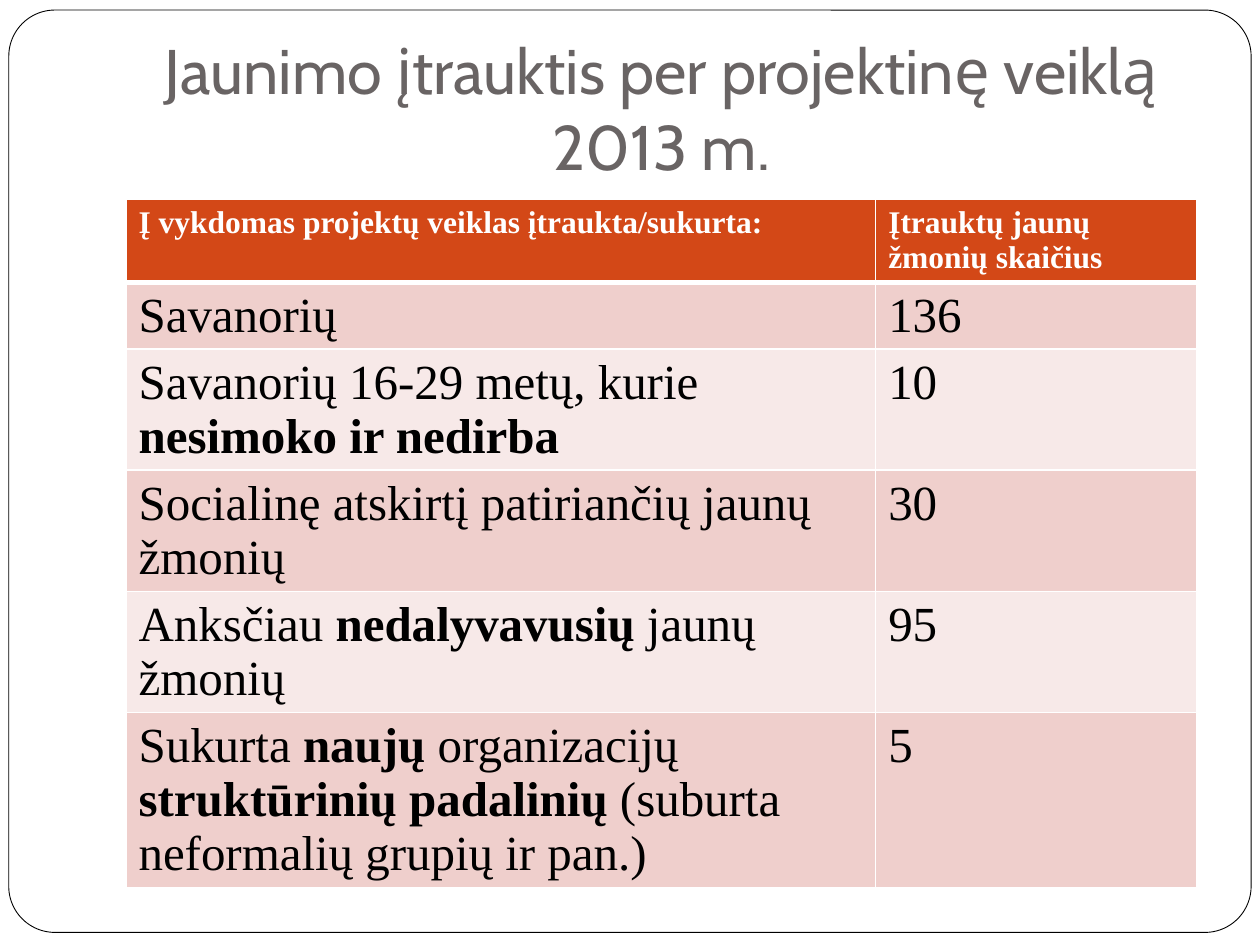
from lxml import etree
from pptx import Presentation
from pptx.dml.color import RGBColor
from pptx.enum.shapes import MSO_SHAPE
from pptx.enum.text import MSO_ANCHOR, MSO_AUTO_SIZE, PP_ALIGN
from pptx.oxml.ns import qn
from pptx.util import Inches, Pt

ROUNDED = MSO_SHAPE.ROUNDED_RECTANGLE
BOTTOM, CENTER, NO_FIT = MSO_ANCHOR.BOTTOM, PP_ALIGN.CENTER, MSO_AUTO_SIZE.NONE

THEME = {
    "white": "FFFFFF", "frame": "000000", "header": "D34817",
    "bands": ["EFCFCC", "F7E9E8"],
    "title": {"name": "Cabin", "size": Pt(36), "color": "696464"},
    "heading": {"name": "Times New Roman", "size": Pt(18), "color": "FFFFFF"},
    "body": {"name": "Times New Roman", "size": Pt(28), "color": "000000"},
}
LEFT, CONTENT_WIDTH = 1, 8.5
COLUMN_WIDTHS = [0.7 * CONTENT_WIDTH, 0.3 * CONTENT_WIDTH]
ONE_LINE, LINE_STEP = 0.53, 0.43

# Asterisks enclose bold words; the number is the count of text lines.
HEADINGS = ["*Į vykdomas projektų veiklas įtraukta/sukurta:*",
            "*Įtrauktų jaunų žmonių skaičius*"]
ROWS = [
    ("Savanorių", "136", 1),
    ("Savanorių 16-29 metų, kurie *nesimoko ir nedirba*", "10", 2),
    ("Socialinę atskirtį patiriančių jaunų žmonių", "30", 2),
    ("Anksčiau *nedalyvavusių* jaunų žmonių", "95", 2),
    ("Sukurta *naujų *organizacijų *struktūrinių padalinių*"
     " (suburta neformalių grupių ir pan.)", "5", 3),
]


def write_marked(paragraph, text, style):
    """Add runs in the given style, with text between asterisks in bold."""
    for index, part in enumerate(text.split("*")):
        if part:
            run = paragraph.add_run()
            run.text = part
            run.font.bold = index % 2 == 1
            run.font.color.rgb = RGBColor.from_string(style["color"])
            for name in ("name", "size"):
                setattr(run.font, name, style[name])


def set_borders(cell, widths):
    """Draw white cell borders; widths maps side letters to points."""
    properties = cell._tc.get_or_add_tcPr()
    for index, (side, width) in enumerate(widths.items()):
        line = etree.Element(qn(f"a:ln{side}"), w=str(Pt(width)))
        fill = etree.SubElement(line, qn("a:solidFill"))
        etree.SubElement(fill, qn("a:srgbClr"), val=THEME["white"])
        properties.insert(index, line)


presentation = Presentation()
presentation.slide_width, presentation.slide_height = Inches(10), Inches(7.5)
slide = presentation.slides.add_slide(presentation.slide_layouts[5])

# Rounded frame behind everything
frame = slide.shapes.add_shape(
    ROUNDED, Inches(0.07), Inches(0.08), Inches(9.86), Inches(7.32))
frame.adjustments[0] = 0.05
frame.shadow.inherit = False
frame.fill.solid()
frame.fill.fore_color.rgb = RGBColor.from_string(THEME["white"])
frame.line.color.rgb = RGBColor.from_string(THEME["frame"])
frame.line.width = Pt(0.5)
slide.shapes._spTree.insert(2, frame._element)

# Title
title = slide.shapes.title
title_box = {"left": LEFT, "top": 0.3, "width": CONTENT_WIDTH, "height": 1.25}
for name, value in title_box.items():
    setattr(title, name, Inches(value))
title_format = {
    "word_wrap": True, "auto_size": NO_FIT, "vertical_anchor": BOTTOM,
    "margin_left": Inches(0.1), "margin_right": Inches(0.1),
    "margin_top": Inches(0.05), "margin_bottom": Inches(0.1),
}
for name, value in title_format.items():
    setattr(title.text_frame, name, value)
title_paragraph = title.text_frame.paragraphs[0]
title_paragraph.alignment = CENTER
write_marked(title_paragraph, "Jaunimo įtrauktis per projektinę veiklą 2013 m.",
             THEME["title"])

# Table of involved young people
heights = [0.66] + [ONE_LINE + LINE_STEP * (lines - 1) for *_, lines in ROWS]
table = slide.shapes.add_table(
    len(heights), len(COLUMN_WIDTHS), Inches(LEFT), Inches(1.58),
    Inches(CONTENT_WIDTH), Inches(sum(heights))).table
for column, width in zip(table.columns, COLUMN_WIDTHS):
    column.width = Inches(width)

contents = [HEADINGS] + [row[:2] for row in ROWS]
for row_index, (texts, height) in enumerate(zip(contents, heights)):
    table.rows[row_index].height = Inches(height)
    is_header = row_index == 0
    color = THEME["header"] if is_header else THEME["bands"][(row_index - 1) % 2]
    style = THEME["heading" if is_header else "body"]
    borders = {"L": 1, "R": 1, "T": 3 if row_index == 1 else 1,
               "B": 3 if is_header else 1}
    for column_index, text in enumerate(texts):
        cell = table.cell(row_index, column_index)
        cell.fill.solid()
        cell.fill.fore_color.rgb = RGBColor.from_string(color)
        set_borders(cell, borders)
        write_marked(cell.text_frame.paragraphs[0], text, style)

presentation.save("out.pptx")
